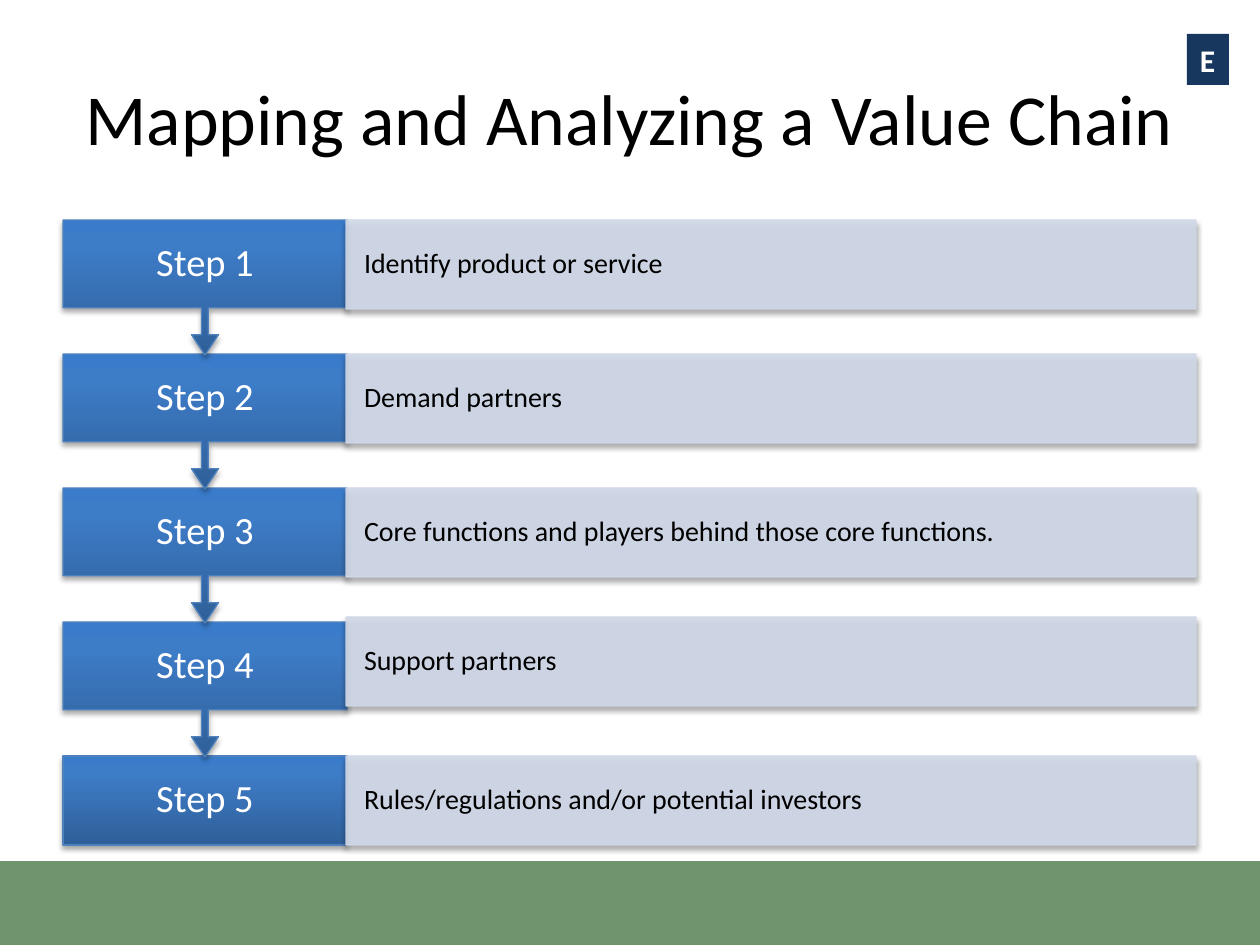
from lxml.etree import SubElement
from pptx import Presentation
from pptx.dml.color import RGBColor
from pptx.enum.shapes import MSO_SHAPE
from pptx.enum.text import MSO_ANCHOR, PP_ALIGN
from pptx.oxml import parse_xml
from pptx.oxml.ns import nsdecls, qn
from pptx.util import Emu, Pt

SCALE = 914400 / 126
FONT = "Calibri"
BLACK, WHITE = "000000", "FFFFFF"
GREEN, NAVY = "70946B", "17375E"
EDGE, PALE = "4F81BD", "D0D8E8"
STOPS = [(0, "2F5F99"), (80, "3D7CC7"), (100, "3A7CCB")]
LEFT, TOP, PITCH, ROW_H = 63, 220, 134, 89
STEP_W, NOTE_W = 284, 850
# Wording and vertical shift of each step's note
STEPS = [
    ("Identify product or service", 0),
    ("Demand partners", 0),
    ("Core functions and players behind those core functions.", 0),
    ("Support partners", -5),
    ("Rules/regulations and/or potential investors", 0),
]


def px(num):
    return Emu(round(num * SCALE))


def color(code):
    return RGBColor.from_string(code)


def write(shape, text, size, code, align=PP_ALIGN.LEFT, pad=(13, 6),
          bold=False, space=None):
    frame = shape.text_frame
    frame.word_wrap = True
    frame.vertical_anchor = MSO_ANCHOR.MIDDLE
    frame.margin_left = frame.margin_right = px(pad[0])
    frame.margin_top = frame.margin_bottom = px(pad[1])
    frame.text = text
    para = frame.paragraphs[0]
    para.alignment = align
    para.line_spacing = space
    for run in para.runs:
        run.font.name = FONT
        run.font.size = Pt(size)
        run.font.bold = bold
        run.font.color.rgb = color(code)


def add_box(slide, kind, box, fill, line=None):
    shape = slide.shapes.add_shape(kind, *map(px, box))
    shape.fill.solid()
    shape.fill.fore_color.rgb = color(fill)
    if line:
        shape.line.color.rgb = color(line)
        shape.line.width = Pt(0.75)
    else:
        shape.line.fill.background()
    shape.shadow.inherit = False
    return shape


def add_alpha(node, share):
    SubElement(node, qn("a:alpha"), val=str(share * 1000))


def drop_shadow(shape):
    effects = shape._element.spPr.find(qn("a:effectLst"))
    outer = SubElement(effects, qn("a:outerShdw"), blurRad=str(Pt(3.1)),
                       dist=str(Pt(1.8)), dir="5400000", rotWithShape="0")
    add_alpha(SubElement(outer, qn("a:srgbClr"), val=BLACK), 35)


def shade(shape):
    """Replace the solid fill with the blue gradient, dark at the foot."""
    stops = "".join(
        f'<a:gs pos="{pos * 1000}"><a:srgbClr val="{code}"/></a:gs>'
        for pos, code in STOPS)
    grad = parse_xml(
        f'<a:gradFill {nsdecls("a")} rotWithShape="0"><a:gsLst>{stops}</a:gsLst>'
        '<a:lin ang="16200000" scaled="0"/></a:gradFill>')
    props = shape._element.spPr
    props.replace(props.find(qn("a:solidFill")), grad)


def add_step(slide, num, last):
    top = TOP + (num - 1) * PITCH
    kind = MSO_SHAPE.RECTANGLE if last else MSO_SHAPE.DOWN_ARROW_CALLOUT
    high = ROW_H if last else PITCH + 1
    shape = add_box(slide, kind, (LEFT, top, STEP_W, high), EDGE, EDGE)
    if not last:
        for i, val in enumerate((0.05, 0.1, 0.15, 0.65)):
            shape.adjustments[i] = val
    shade(shape)
    drop_shadow(shape)
    write(shape, f"Step {num}", 22, WHITE, PP_ALIGN.CENTER, (20, 21), space=0.9)


def add_note(slide, num, text, shift):
    top = TOP + (num - 1) * PITCH + shift
    shape = add_box(slide, MSO_SHAPE.RECTANGLE,
                    (LEFT + STEP_W - 1, top, NOTE_W, ROW_H), PALE, PALE)
    for node in shape._element.spPr.iter(qn("a:srgbClr")):
        add_alpha(node, 90)
    drop_shadow(shape)
    write(shape, text, 16, BLACK, pad=(18, 28), space=0.9)


def add_title(slide, text):
    box = slide.shapes.add_textbox(*map(px, (63, 38, 1134, 157)))
    write(box, text, 41, BLACK, PP_ALIGN.CENTER)


def main():
    deck = Presentation()
    deck.slide_width, deck.slide_height = px(1260), px(945)
    slide = deck.slides.add_slide(deck.slide_layouts[6])
    add_box(slide, MSO_SHAPE.RECTANGLE, (0, 861, 1260, 84), GREEN)
    add_title(slide, "Mapping and Analyzing a Value Chain")
    # Lower steps go first so that each arrow lies over the next step
    for num in range(len(STEPS), 0, -1):
        add_step(slide, num, num == len(STEPS))
        add_note(slide, num, *STEPS[num - 1])
    badge = add_box(slide, MSO_SHAPE.RECTANGLE, (1187, 34, 42, 51), NAVY)
    write(badge, "E", 18, WHITE, bold=True)
    deck.save("out.pptx")


if __name__ == "__main__":
    main()
